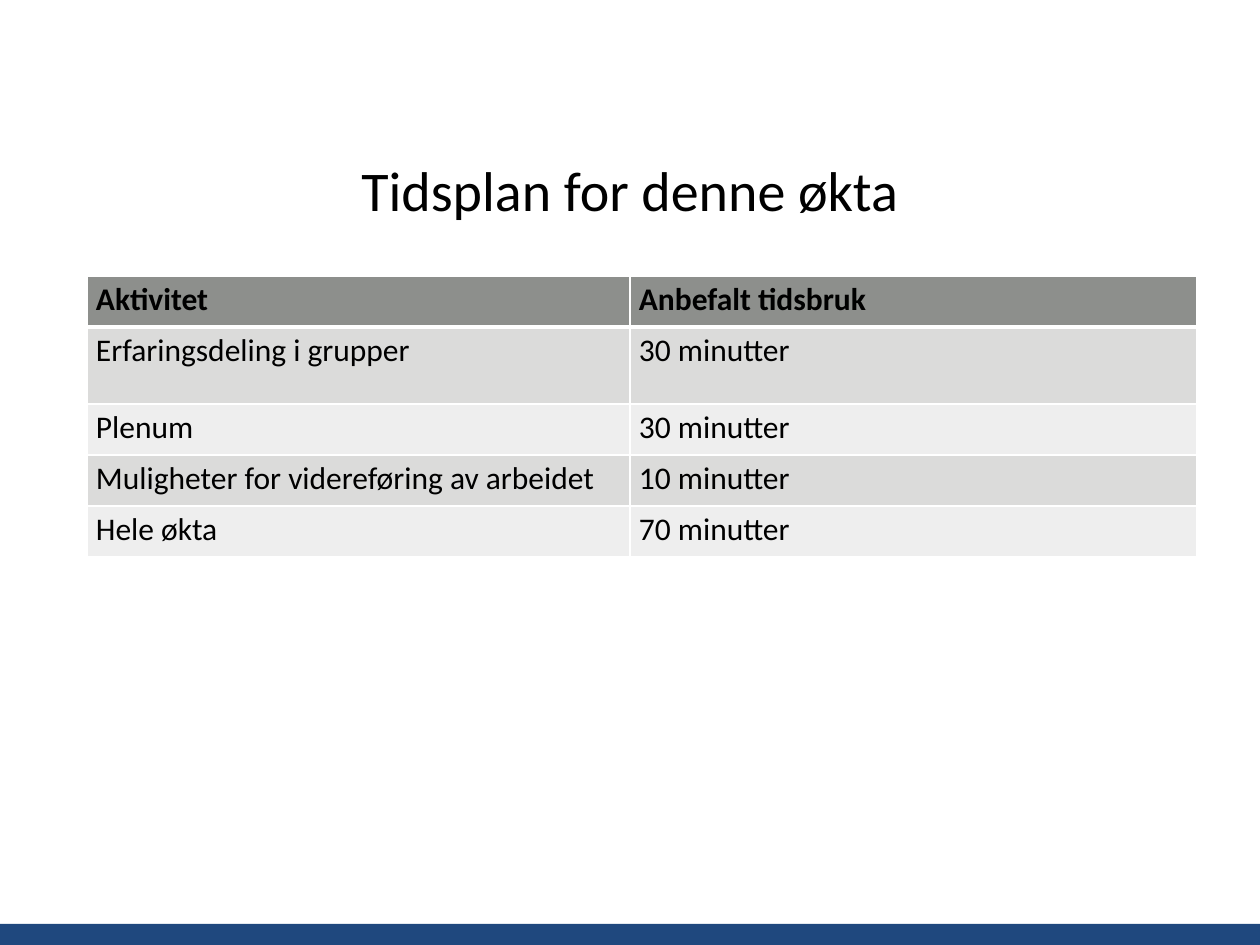
from lxml.etree import SubElement
from pptx import Presentation
from pptx.dml.color import RGBColor
from pptx.enum.shapes import MSO_SHAPE
from pptx.enum.text import MSO_ANCHOR, PP_ALIGN
from pptx.oxml.ns import qn
from pptx.util import Pt

PX = 914400 // 126
PAGE_WIDTH, PAGE_HEIGHT = 1260, 945
BAND_HEIGHT = 21
FONT = "Calibri"
BLACK, WHITE, BLUE = "000000", "FFFFFF", "1F487E"
HEADER_FILL = "8D8F8C"
ROW_FILLS = ["DBDBDA", "EEEEEE"]

TITLE = "Tidsplan for denne økta"
SCHEDULE = [
    ("Aktivitet", "Anbefalt tidsbruk"),
    ("Erfaringsdeling i grupper", "30 minutter"),
    ("Plenum", "30 minutter"),
    ("Muligheter for videreføring av arbeidet", "10 minutter"),
    ("Hele økta", "70 minutter"),
]
COLUMN_WIDTHS = [543, 567]
ROW_HEIGHTS = [51, 77, 51, 51, 51]


def px(*lengths):
    return [length * PX for length in lengths]


def color(value):
    return RGBColor.from_string(value)


def fill(target, value):
    target.fill.solid()
    target.fill.fore_color.rgb = color(value)


def style_text(frame, size, bold=False):
    for para in frame.paragraphs:
        for span in para.runs:
            span.font.name = FONT
            span.font.size = Pt(size)
            span.font.bold = bold
            span.font.color.rgb = color(BLACK)


def add_borders(cell, widths):
    """Draw white cell borders; widths maps each side (L, R, T, B) to points."""
    properties = cell._tc.get_or_add_tcPr()
    for side, width in widths.items():
        line = SubElement(properties, qn(f"a:ln{side}"), w=str(Pt(width)))
        line_fill = SubElement(line, qn("a:solidFill"))
        SubElement(line_fill, qn("a:srgbClr"), val=WHITE)


def add_band(page):
    band = page.shapes.add_shape(
        MSO_SHAPE.RECTANGLE,
        *px(0, PAGE_HEIGHT - BAND_HEIGHT, PAGE_WIDTH, BAND_HEIGHT))
    band.shadow.inherit = False
    fill(band, BLUE)
    band.line.fill.background()


def set_title(page):
    title = page.shapes.title
    title.left, title.top, title.width, title.height = px(63, 126, 1134, 127)
    frame = title.text_frame
    frame.text = TITLE
    frame.vertical_anchor = MSO_ANCHOR.MIDDLE
    frame.paragraphs[0].alignment = PP_ALIGN.CENTER
    style_text(frame, 32)


def add_schedule(page):
    table = page.shapes.add_table(
        len(SCHEDULE), len(COLUMN_WIDTHS),
        *px(87, 276, sum(COLUMN_WIDTHS), sum(ROW_HEIGHTS))).table
    for column, width in zip(table.columns, px(*COLUMN_WIDTHS)):
        column.width = width
    for row, height in zip(table.rows, px(*ROW_HEIGHTS)):
        row.height = height
    for r, texts in enumerate(SCHEDULE):
        is_header = r == 0
        for c, text in enumerate(texts):
            cell = table.cell(r, c)
            cell.text = text
            cell.margin_left, cell.margin_right = px(9, 9)
            cell.margin_top, cell.margin_bottom = px(5, 5)
            style_text(cell.text_frame, 18, bold=is_header)
            # Borders must come before the fill in the cell properties.
            add_borders(cell, {"L": 1, "R": 1,
                               "T": 3 if r == 1 else 1,
                               "B": 3 if is_header else 1})
            fill(cell, HEADER_FILL if is_header else ROW_FILLS[(r - 1) % 2])


def main():
    deck = Presentation()
    deck.slide_width, deck.slide_height = px(PAGE_WIDTH, PAGE_HEIGHT)
    page = deck.slides.add_slide(deck.slide_layouts.get_by_name("Title Only"))
    add_band(page)
    set_title(page)
    add_schedule(page)
    deck.save("out.pptx")


if __name__ == "__main__":
    main()
